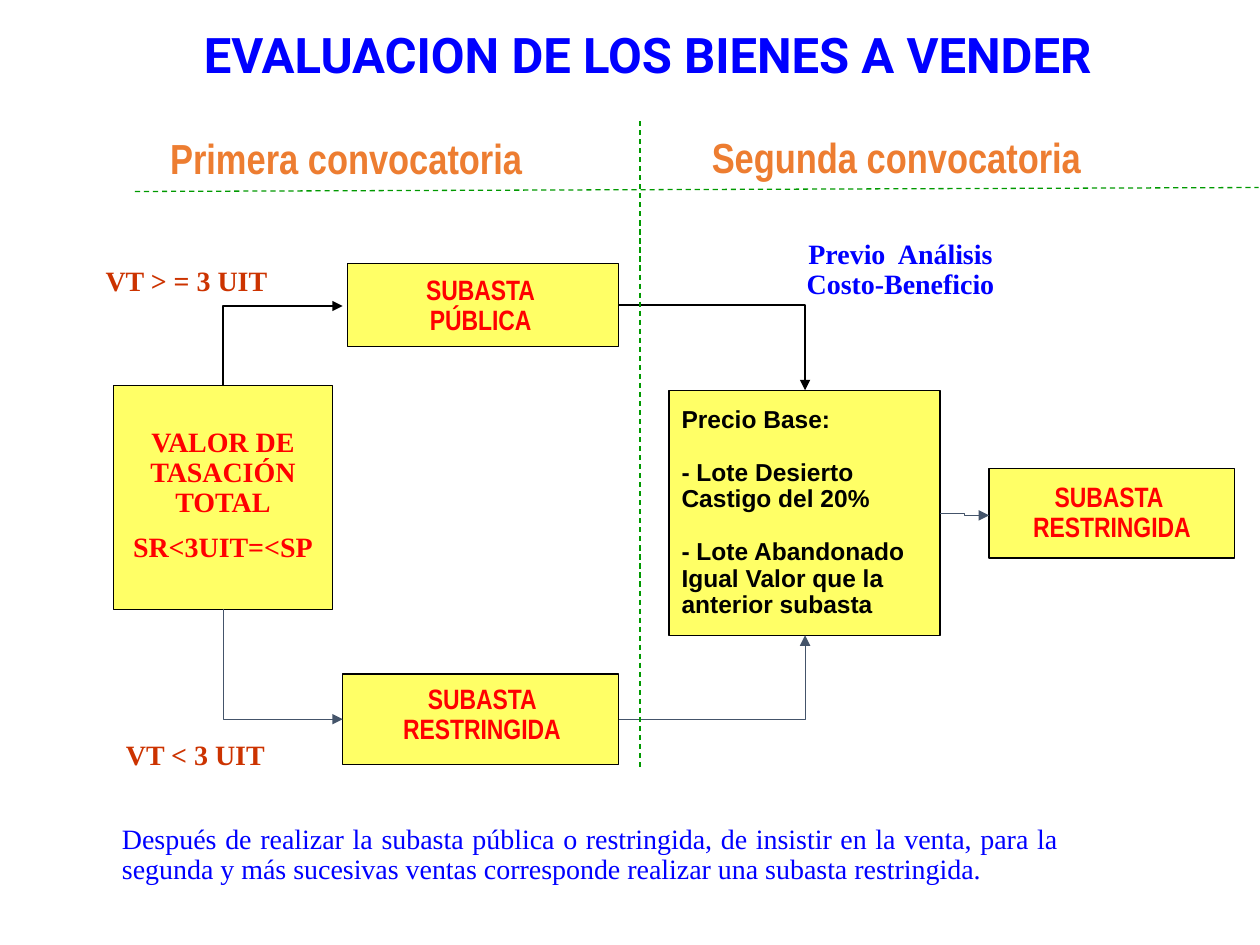
from dataclasses import dataclass
from pptx import Presentation
from pptx.dml.color import RGBColor
from pptx.enum.dml import MSO_LINE
from pptx.enum.shapes import MSO_CONNECTOR, MSO_SHAPE
from pptx.enum.text import MSO_ANCHOR, MSO_AUTO_SIZE, PP_ALIGN
from pptx.oxml.ns import qn
from pptx.util import Cm, Pt
from lxml.etree import SubElement


@dataclass(frozen=True)
class Theme:
    blue: str = "0000FF"
    red: str = "FF0000"
    rust: str = "CC3300"
    orange: str = "ED7D31"
    black: str = "000000"
    slate: str = "44546A"
    green: str = "009900"
    yellow: str = "FFFF66"
    title: int = 28
    head: int = 24
    body: int = 16
    small: int = 14
    serif: str = "Times New Roman"
    narrow: str = "Arial Narrow"
    sans: str = "Arial"
    display: str = "Roboto"


T = Theme()
LEFT, MID, FULL = PP_ALIGN.LEFT, PP_ALIGN.CENTER, PP_ALIGN.JUSTIFY


def color(code):
    return RGBColor.from_string(code)


def write(shape, lines, font, size, tint, align=MID, bold=True,
          lead=0.9, gaps=None):
    """Fill a shape with paragraphs; gaps maps a line number to space before."""
    frame = shape.text_frame
    frame.text = "\n".join(lines)
    for num, para in enumerate(frame.paragraphs):
        para.alignment = align
        para.line_spacing = lead
        para.space_before = Pt((gaps or {}).get(num, 0))
        for run in para.runs:
            run.font.name = font
            run.font.size = Pt(size)
            run.font.bold = bold
            run.font.color.rgb = color(tint)


def label(slide, spot, lines, font, size, tint, wrap=True, **style):
    box = slide.shapes.add_textbox(*map(Cm, spot))
    box.text_frame.word_wrap = wrap
    box.text_frame.auto_size = MSO_AUTO_SIZE.SHAPE_TO_FIT_TEXT
    write(box, lines, font, size, tint, **style)


def block(slide, spot):
    box = slide.shapes.add_shape(MSO_SHAPE.RECTANGLE, *map(Cm, spot))
    box.shadow.inherit = False
    box.fill.solid()
    box.fill.fore_color.rgb = color(T.yellow)
    box.line.color.rgb = color(T.black)
    box.line.width = Pt(0.75)
    box.text_frame.word_wrap = False
    box.text_frame.vertical_anchor = MSO_ANCHOR.MIDDLE
    return box


def wire(slide, kind, ends, tint, width):
    line = slide.shapes.add_connector(kind, *map(Cm, ends))
    line.line.color.rgb = color(tint)
    line.line.width = Pt(width)
    SubElement(line._element.spPr, qn("a:effectLst"))
    return line


def divide(slide, ends):
    line = wire(slide, MSO_CONNECTOR.STRAIGHT, ends, T.green, 0.75)
    line.line.dash_style = MSO_LINE.DASH


def arrow(slide, ends, tint, width, tip="tailEnd", corner=True):
    """Elbow that leaves its first end sideways; tip names the arrow end."""
    line = wire(slide, MSO_CONNECTOR.ELBOW, ends, tint, width)
    props = line._element.spPr
    if corner:
        props.find(qn("a:prstGeom")).set("prst", "bentConnector2")
    SubElement(props.find(qn("a:ln")), qn("a:" + tip), type="triangle")


def main():
    deck = Presentation()
    deck.slide_width, deck.slide_height = Cm(25.4), Cm(19.05)
    slide = deck.slides.add_slide(deck.slide_layouts[6])

    # Title
    label(slide, (2.16, 0.36, 21.79, 1.45),
          ["EVALUACION DE LOS BIENES A VENDER"],
          T.display, T.title, T.blue, lead=1)

    # Appraisal value
    block(slide, (2.29, 7.77, 4.42, 4.52))
    label(slide, (2.08, 8.51, 4.83, 4.01),
          ["VALOR DE TASACIÓN TOTAL", "SR<3UIT=<SP"],
          T.serif, T.body, T.red, gaps={1: 8})

    # First call auctions
    block(slide, (7.01, 5.31, 5.46, 1.68))
    label(slide, (6.91, 5.44, 5.56, 1.5), ["SUBASTA", "PÚBLICA"],
          T.narrow, T.body, T.red)
    block(slide, (6.91, 13.59, 5.56, 1.83))
    label(slide, (7.11, 13.69, 5.21, 1.5), ["SUBASTA RESTRINGIDA"],
          T.narrow, T.body, T.red)

    # Conditions and notes
    for spot, text in (((1.88, 5.26, 3.78, 0.94), "VT > = 3 UIT"),
                       ((2.29, 14.83, 3.86, 0.94), "VT < 3 UIT")):
        label(slide, spot, [text], T.serif, T.body, T.rust, align=LEFT)
    label(slide, (15.62, 4.72, 5.21, 1.5),
          ["Previo  Análisis ", "Costo-Beneficio "],
          T.serif, T.body, T.blue)
    label(slide, (2.21, 16.51, 19.38, 1.5),
          ["Después de realizar la subasta pública o restringida, de insistir "
           "en la venta, para la segunda y más sucesivas ventas corresponde "
           "realizar una subasta restringida."],
          T.serif, T.body, T.blue, align=FULL, bold=False)

    # Second call: base price and auction
    price = block(slide, (13.49, 7.87, 5.46, 4.95))
    write(price, ["Precio Base:", "- Lote Desierto", "Castigo del 20%",
                  "- Lote Abandonado", "Igual Valor que la",
                  "anterior subasta"],
          T.sans, T.small, T.black, align=LEFT, gaps={1: 15, 3: 15})
    last = block(slide, (19.94, 9.45, 4.95, 1.8))
    write(last, ["SUBASTA ", "RESTRINGIDA"], T.narrow, T.body, T.red)

    # Flow arrows
    arrow(slide, (6.91, 14.5, 4.5, 12.28), T.slate, 0.5, tip="headEnd")
    arrow(slide, (6.91, 6.17, 4.5, 7.77), T.black, 0.75, tip="headEnd")
    arrow(slide, (12.47, 6.15, 16.23, 7.87), T.black, 0.75)
    arrow(slide, (12.47, 14.5, 16.23, 12.81), T.slate, 0.5)
    arrow(slide, (18.95, 10.35, 19.94, 10.39), T.slate, 0.5, corner=False)

    # Dividers and column heads
    divide(slide, (12.9, 2.44, 12.9, 15.52))
    divide(slide, (2.72, 3.86, 25.37, 3.78))
    for spot, text in (((3.18, 2.67, 7.7, 1.17), "Primera convocatoria"),
                       ((14.1, 2.64, 8.23, 1.17), "Segunda convocatoria")):
        label(slide, spot, [text], T.narrow, T.head, T.orange,
              wrap=False, align=LEFT)

    deck.save("out.pptx")


if __name__ == "__main__":
    main()
